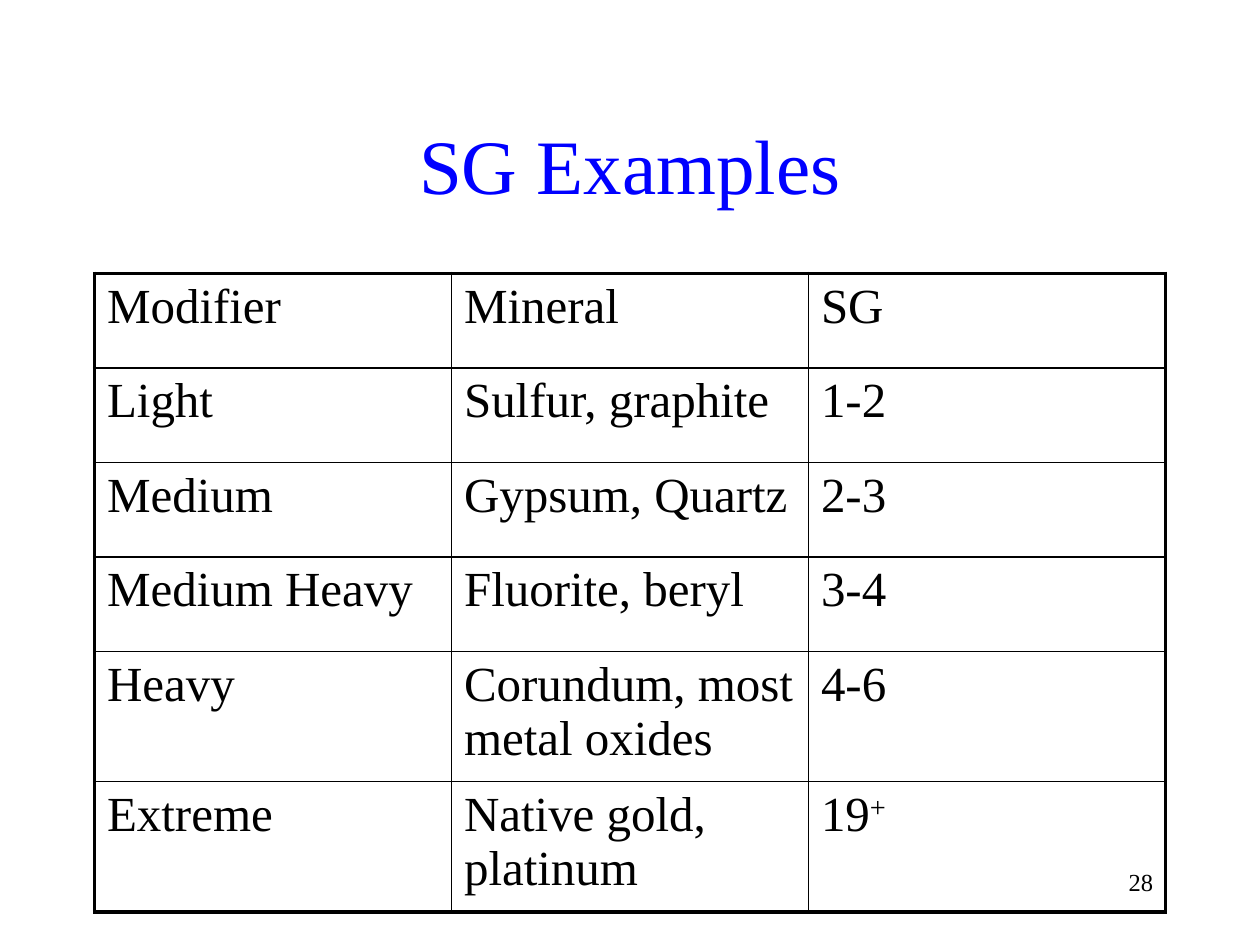
from dataclasses import dataclass

from lxml.etree import SubElement
from pptx import Presentation
from pptx.dml.color import RGBColor
from pptx.enum.text import MSO_ANCHOR as Anchor, PP_ALIGN as Align
from pptx.oxml.ns import qn
from pptx.util import Inches, Pt


@dataclass(frozen=True)
class Theme:
    font: str = "Times New Roman"
    ink: str = "000000"
    title_color: str = "0000FF"
    title_size: int = 44
    table_size: int = 28
    number_size: int = 14
    outer_line: float = 2.25
    inner_line: float = 1


THEME = Theme()

ROWS = [
    ("Modifier", "Mineral", "SG"),
    ("Light", "Sulfur, graphite", "1-2"),
    ("Medium", "Gypsum, Quartz", "2-3"),
    ("Medium Heavy", "Fluorite, beryl", "3-4"),
    ("Heavy", "Corundum, most metal oxides", "4-6"),
    ("Extreme", "Native gold, platinum", "19"),
]
ROW_HEIGHTS = [0.75] * 4 + [1.03] * 2
TABLE_WIDTH = 8.5


def style(para, size, color=THEME.ink, align=Align.LEFT):
    para.alignment = align
    para.font.name = THEME.font
    para.font.size = Pt(size)
    para.font.color.rgb = RGBColor.from_string(color)


def add_text(page, text, place, size, color, align, anchor):
    box = page.shapes.add_textbox(*map(Inches, place))
    frame = box.text_frame
    frame.word_wrap = True
    frame.vertical_anchor = anchor
    frame.text = text
    style(frame.paragraphs[0], size, color, align)


def set_borders(cell, widths):
    """Draw the cell's sides; widths maps L, R, T and B to points."""
    properties = cell._tc.get_or_add_tcPr()
    for side in "LRTB":
        line = SubElement(properties, qn(f"a:ln{side}"), w=str(Pt(widths[side])))
        fill = SubElement(line, qn("a:solidFill"))
        SubElement(fill, qn("a:srgbClr"), val=THEME.ink)


def add_mineral_table(page):
    row_count, column_count = len(ROWS), len(ROWS[0])
    table = page.shapes.add_table(
        row_count, column_count, Inches(0.75), Inches(2.17),
        Inches(TABLE_WIDTH), Inches(sum(ROW_HEIGHTS))).table
    table.first_row = table.horz_banding = False
    for column in table.columns:
        column.width = Inches(TABLE_WIDTH / column_count)

    for r, (texts, height) in enumerate(zip(ROWS, ROW_HEIGHTS)):
        table.rows[r].height = Inches(height)
        for c, text in enumerate(texts):
            cell = table.cell(r, c)
            cell.text = text
            style(cell.text_frame.paragraphs[0], THEME.table_size)
            on_edge = {"L": c == 0, "R": c == column_count - 1,
                       "T": r == 0, "B": r == row_count - 1}
            set_borders(cell, {
                side: THEME.outer_line if outer else THEME.inner_line
                for side, outer in on_edge.items()})
            cell.fill.background()
    return table


def add_superscript(cell, text):
    span = cell.text_frame.paragraphs[0].add_run()
    span.text = text
    span.font._element.set("baseline", "30000")


def main():
    deck = Presentation()
    deck.slide_width, deck.slide_height = Inches(10), Inches(7.5)
    page = deck.slides.add_slide(deck.slide_layouts[6])

    add_text(page, "28", (7.17, 6.83, 2.08, 0.5), THEME.number_size,
             THEME.ink, Align.RIGHT, Anchor.TOP)
    add_text(page, "SG Examples", (0.75, 0.67, 8.5, 1.25), THEME.title_size,
             THEME.title_color, Align.CENTER, Anchor.MIDDLE)
    table = add_mineral_table(page)
    add_superscript(table.cell(len(ROWS) - 1, 2), "+")

    deck.save("out.pptx")


if __name__ == "__main__":
    main()
